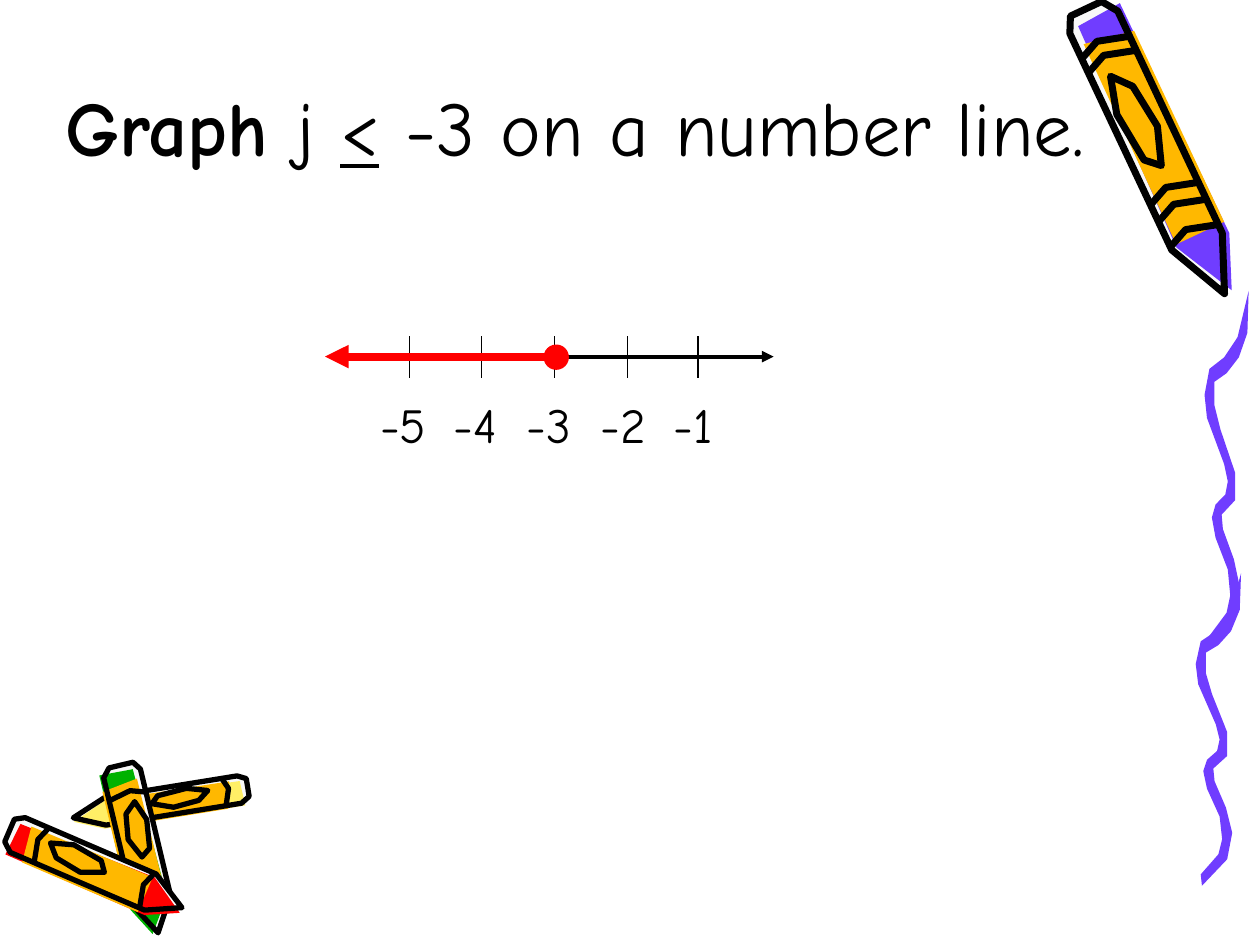
from math import hypot
from lxml.etree import SubElement as Sub
from pptx import Presentation
from pptx.dml.color import RGBColor as RGB
from pptx.enum.shapes import MSO_CONNECTOR as Conn, MSO_SHAPE as Form
from pptx.enum.text import MSO_ANCHOR as Anchor, PP_ALIGN as Align
from pptx.oxml.ns import qn
from pptx.util import Inches, Pt

FONT = "Comic Neue"
HUES = {"ink": "000000", "red": "FF0000", "gold": "FFB800", "plum": "703DFF",
        "pale": "F8F8F8", "cream": "FFEF66", "green": "00B200"}

# Title runs: text, bold, underlined
TITLE = [("Graph ", True, False), ("j ", False, False),
         ("<", False, True), (" -3 on a number line.", False, False)]

# Number line: label, tick position, label left
AXIS = 2.83
TICKS = [("-5", 3.25, 2.92), ("-4", 3.82, 3.5), ("-3", 4.4, 4.08),
         ("-2", 4.98, 4.67), ("-1", 5.54, 5.25)]

# One crayon: part along its length (0 end, 1 tip), part across (-0.5 to 0.5)
CASE = [(.03, -.5), (-.02, -.35), (-.02, .3), (.03, .5), (.82, .5), (1, .05), (.8, -.5)]
WAX = [(.02, -.3), (.01, .6), (.83, .62), (1, .2), (.8, -.4)]
WRAP = [(.08, -.35), (.11, .62), (.79, .62), (.79, -.38)]
RING = [(.21, -.15), (.27, .15), (.42, .25), (.54, 0), (.5, -.25), (.33, -.35)]
BANDS = [.12, .17, .64, .7, .79]

# Crayons: wax, end, tip, width (negative mirrors it), outline points, bands
CRAYONS = [("plum", (8.65, .11), (9.7, 2.34), .42, 4, BANDS),
           ("cream", (1.94, 6.26), (.58, 6.48), .22, 3, BANDS[:1]),
           ("green", (.96, 6.1), (1.27, 7.4), -.3, 3, BANDS[1:2]),
           ("red", (.1, 6.61), (1.45, 7.19), -.3, 3, BANDS[1::3])]

# One squiggle, drawn twice: left, top, width, height
WAVE = [(9.53, 6.94), (9.67, 6.78), (9.7, 6.66), (9.68, 6.48), (9.58, 6.26),
        (9.55, 6.12), (9.58, 6.03), (9.66, 5.96), (9.68, 5.87), (9.65, 5.75),
        (9.51, 5.43), (9.49, 5.27), (9.53, 5.09), (9.65, 5.01), (9.76, 4.87),
        (9.85, 4.55), (9.84, 4.84), (9.77, 5.01), (9.67, 5.12), (9.57, 5.18),
        (9.57, 5.34), (9.62, 5.51), (9.74, 5.81), (9.74, 6), (9.63, 6.1),
        (9.64, 6.2), (9.73, 6.41), (9.78, 6.61), (9.74, 6.82), (9.54, 7.03)]
SPOTS = [(9.49, 4.55, .36, 2.48), (9.56, 2.31, .35, 2.84)]


def hue(name):
    return RGB.from_string(HUES[name])


def draw(shapes, dots, fill=None, width=0, close=True):
    """Add an outline through dots, filled, inked, or both."""
    dots = [(Inches(x), Inches(y)) for x, y in dots]
    pen = shapes.build_freeform(*dots[0])
    pen.add_line_segments(dots[1:], close=close)
    shape = pen.convert_to_shape()
    shape.shadow.inherit = False
    if fill:
        shape.fill.solid()
        shape.fill.fore_color.rgb = hue(fill)
    else:
        shape.fill.background()
    if width:
        shape.line.color.rgb = hue("ink")
        shape.line.width = Pt(width)
    else:
        shape.line.fill.background()


def crayon(shapes, wax, end, tip, wide, width, bands):
    dx, dy = tip[0] - end[0], tip[1] - end[1]
    side = wide / hypot(dx, dy)

    def place(dots):
        return [(end[0] + u * dx + v * side * dy, end[1] + u * dy - v * side * dx)
                for u, v in dots]

    for dots, fill in ((CASE, "pale"), (WAX, wax), (WRAP, "gold")):
        draw(shapes, place(dots), fill)
    for dots in (CASE, RING):
        draw(shapes, place(dots), width=width)
    for u in bands:
        bend = [(u, -.5), (u - .03, -.1), (u, .5)]
        draw(shapes, place(bend), width=width, close=False)


def squiggle(shapes, left, top, wide, high):
    x0, y0, w0, h0 = SPOTS[0]
    draw(shapes, [(left + (x - x0) * wide / w0, top + (y - y0) * high / h0)
                  for x, y in WAVE], "plum")


def rule(shapes, start, end, name, width, tips=()):
    """Add a straight line; tips names the ends (headEnd, tailEnd) with arrows."""
    line = shapes.add_connector(Conn.STRAIGHT, *map(Inches, start + end))
    line.line.color.rgb = hue(name)
    line.line.width = Pt(width)
    props = line._element.spPr
    for tip in tips:
        Sub(props.find(qn("a:ln")), qn("a:" + tip), type="triangle")
    Sub(props, qn("a:effectLst"))


def write(para, text, size, bold=False, under=False):
    run = para.add_run()
    run.text = text
    font = run.font
    font.name, font.size, font.bold, font.underline = FONT, Pt(size), bold, under
    font.color.rgb = hue("ink")


def main():
    deck = Presentation()
    deck.slide_width, deck.slide_height = Inches(10), Inches(7.5)
    shapes = deck.slides.add_slide(deck.slide_layouts[5]).shapes

    for spot in SPOTS:
        squiggle(shapes, *spot)
    for pose in CRAYONS:
        crayon(shapes, *pose)

    title = shapes.title
    title.left, title.top = Inches(.42), Inches(.58)
    title.width, title.height = Inches(8.6), Inches(.83)
    frame = title.text_frame
    frame.word_wrap = False
    frame.vertical_anchor = Anchor.TOP
    para = frame.paragraphs[0]
    para.alignment = Align.LEFT
    for text, bold, under in TITLE:
        write(para, text, 44, bold, under)

    rule(shapes, (2.64, AXIS), (6.14, AXIS), "ink", 2.25, ("headEnd", "tailEnd"))
    for text, x, left in TICKS:
        rule(shapes, (x, 2.67), (x, 3), "ink", .75)
        box = shapes.add_textbox(Inches(left), Inches(3.08), Inches(.67), Inches(.57))
        box.text_frame.word_wrap = True
        write(box.text_frame.paragraphs[0], text, 28)

    dot = shapes.add_shape(Form.OVAL, Inches(4.33), Inches(2.75), Inches(.17), Inches(.17))
    dot.shadow.inherit = False
    dot.fill.solid()
    dot.fill.fore_color.rgb = dot.line.color.rgb = hue("red")
    dot.line.width = Pt(2.25)
    rule(shapes, (4.33, AXIS), (2.58, AXIS), "red", 4.5, ("tailEnd",))

    deck.save("out.pptx")


if __name__ == "__main__":
    main()
